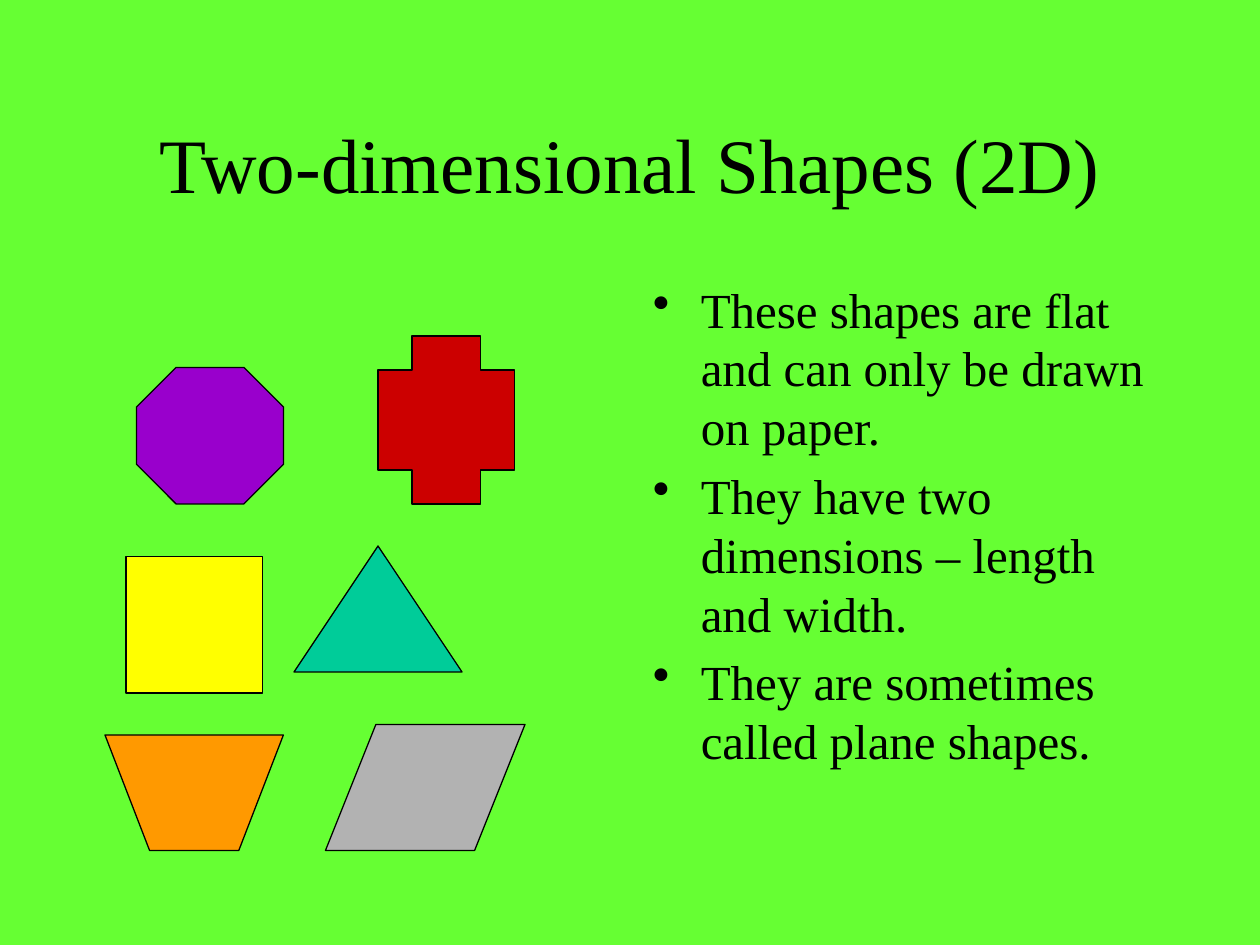
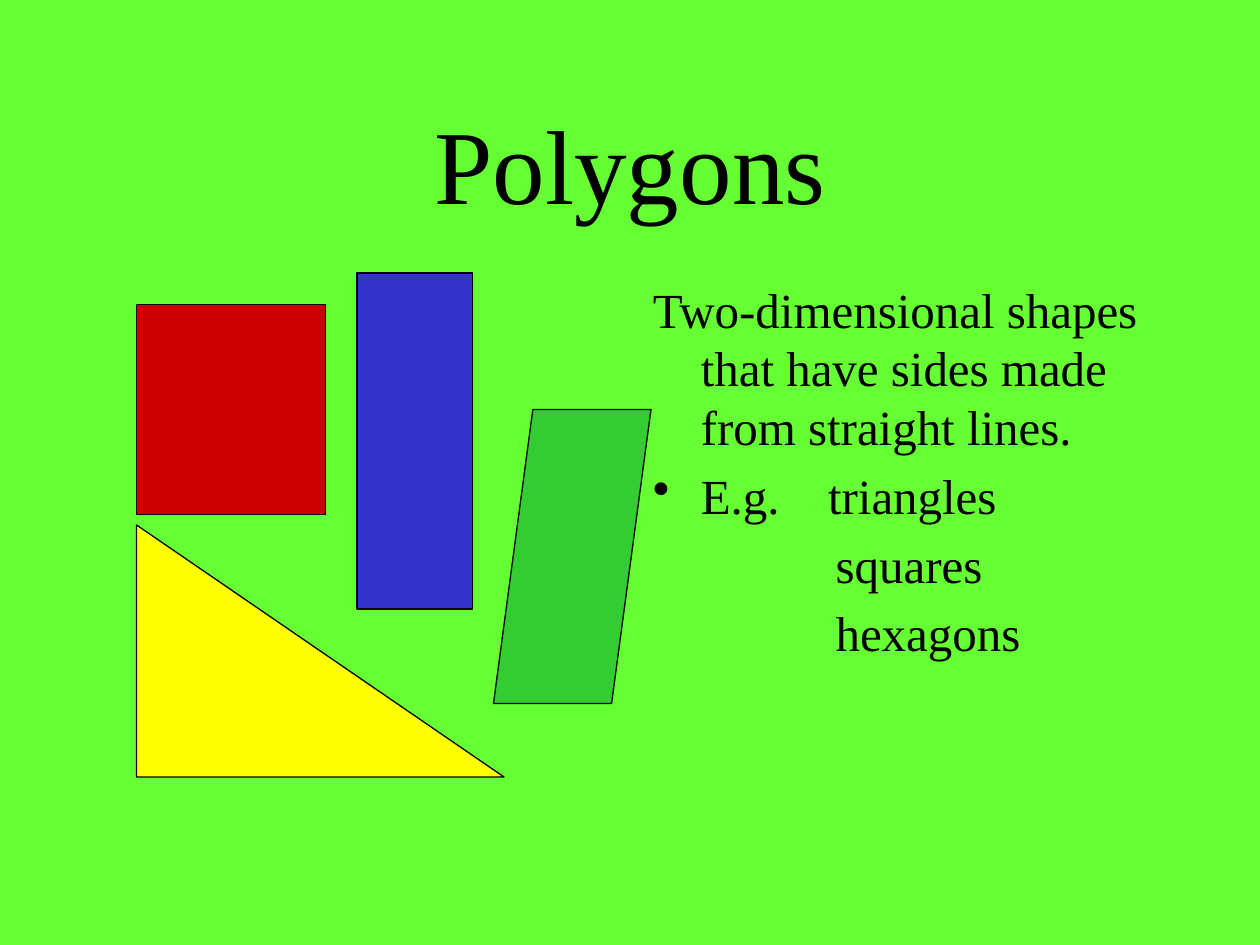
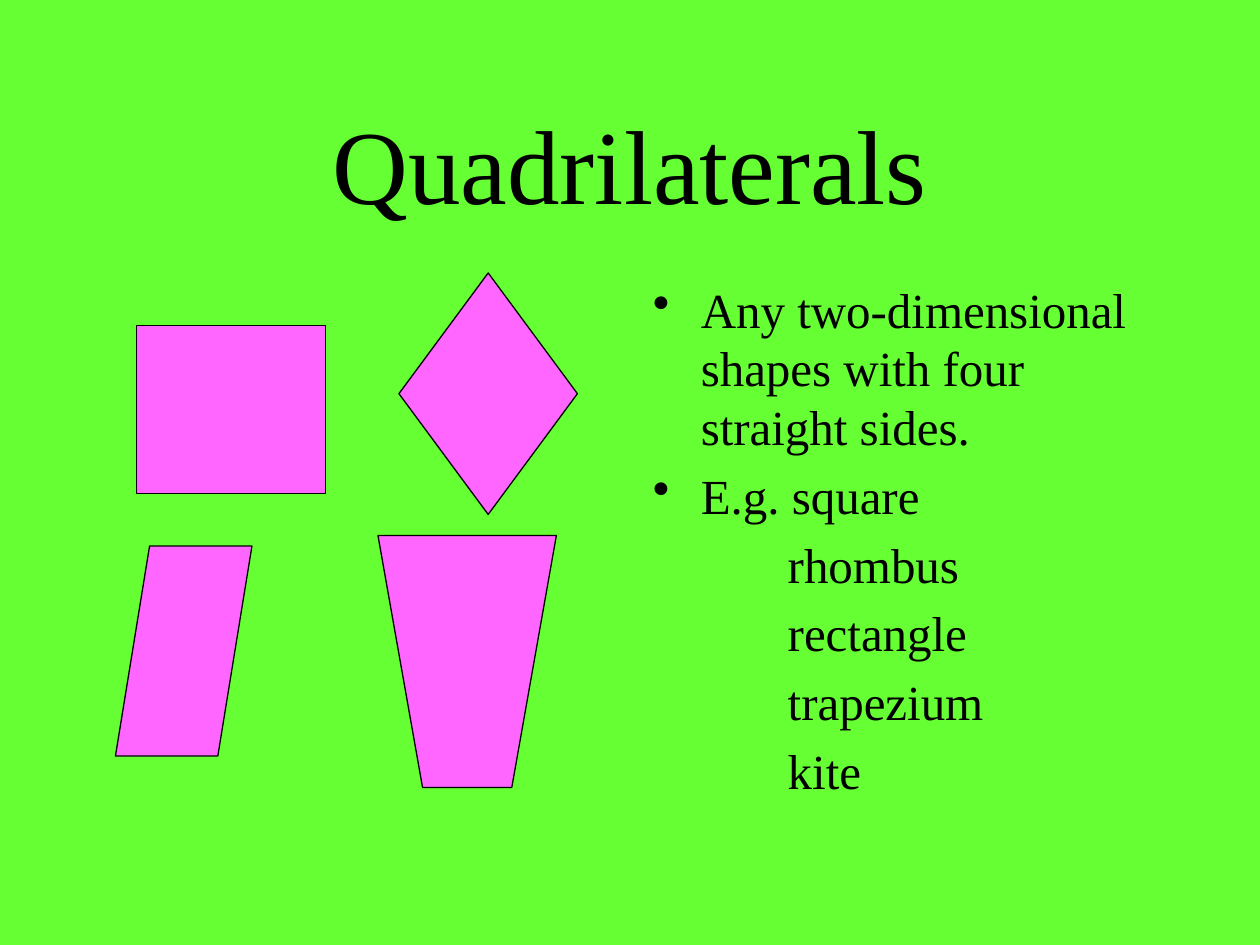
from dataclasses import dataclass

from lxml import etree
from pptx import Presentation
from pptx.dml.color import RGBColor
from pptx.enum.shapes import MSO_SHAPE
from pptx.enum.text import MSO_ANCHOR, PP_ALIGN
from pptx.oxml.ns import qn
from pptx.util import Inches, Pt

OCTAGON = MSO_SHAPE.OCTAGON
RECTANGLE = MSO_SHAPE.RECTANGLE
TRIANGLE = MSO_SHAPE.ISOSCELES_TRIANGLE
RIGHT_TRIANGLE = MSO_SHAPE.RIGHT_TRIANGLE
CROSS = MSO_SHAPE.CROSS
PARALLELOGRAM = MSO_SHAPE.PARALLELOGRAM
DIAMOND = MSO_SHAPE.DIAMOND
MIDDLE = MSO_ANCHOR.MIDDLE
TOP = MSO_ANCHOR.TOP
CENTER = PP_ALIGN.CENTER

COLUMNS, ROWS = 120, 90
TITLE_AREA = (9, 8, 102, 15)
BODY_AREA = (61, 26, 50, 54)


@dataclass(frozen=True)
class Theme:
    font: str = "Times New Roman"
    background: str = "66FF33"
    ink: str = "000000"
    purple: str = "9900CC"
    yellow: str = "FFFF00"
    teal: str = "00CC99"
    red: str = "CC0000"
    orange: str = "FF9900"
    grey: str = "B2B2B2"
    blue: str = "3333CC"
    green: str = "33CC33"
    pink: str = "FF66FF"
    title_size: int = 44
    large_title_size: int = 60
    body_size: int = 28
    paragraph_gap: float = 5.6
    outline: float = 0.75
    hanging: float = 0.38


class ShapesDeck:
    def __init__(self, theme):
        self.theme = theme
        self.deck = Presentation()
        self.deck.slide_width = Inches(10)
        self.deck.slide_height = Inches(7.5)
        self.slide = None

    def area(self, left, top, width, height):
        column = self.deck.slide_width / COLUMNS
        row = self.deck.slide_height / ROWS
        return (round(left * column), round(top * row),
                round(width * column), round(height * row))

    def new_slide(self, title, size):
        self.slide = self.deck.slides.add_slide(self.deck.slide_layouts[6])
        fill = self.slide.background.fill
        fill.solid()
        fill.fore_color.rgb = RGBColor.from_string(self.theme.background)
        heading = self.text_frame(TITLE_AREA, MIDDLE).paragraphs[0]
        heading.alignment = CENTER
        self.add_words(heading, title, size)

    def text_frame(self, cells, anchor):
        frame = self.slide.shapes.add_textbox(*self.area(*cells)).text_frame
        frame.word_wrap = True
        frame.vertical_anchor = anchor
        return frame

    def add_words(self, paragraph, text, size):
        run = paragraph.add_run()
        run.text = text
        run.font.name = self.theme.font
        run.font.size = Pt(size)
        run.font.color.rgb = RGBColor.from_string(self.theme.ink)

    def body(self, entries):
        frame = self.text_frame(BODY_AREA, TOP)
        for index, (text, style) in enumerate(entries):
            paragraph = frame.paragraphs[0] if index == 0 else frame.add_paragraph()
            paragraph.space_before = Pt(self.theme.paragraph_gap)
            self.indent(paragraph, **style)
            self.add_words(paragraph, text, self.theme.body_size)

    def indent(self, paragraph, bullet=False, left=None, tab=None):
        properties = paragraph._p.get_or_add_pPr()
        hanging = self.theme.hanging
        properties.set("marL", str(Inches(hanging if left is None else left)))
        properties.set("indent", str(Inches(-hanging if left is None else 0)))
        if bullet:
            etree.SubElement(properties, qn("a:buChar"), char="•")
        else:
            etree.SubElement(properties, qn("a:buNone"))
        if tab:
            stops = etree.SubElement(properties, qn("a:tabLst"))
            etree.SubElement(stops, qn("a:tab"), pos=str(Inches(tab)), algn="l")

    def finish(self, figure, color):
        figure.shadow.inherit = False
        figure.fill.solid()
        figure.fill.fore_color.rgb = RGBColor.from_string(color)
        figure.line.color.rgb = RGBColor.from_string(self.theme.ink)
        figure.line.width = Pt(self.theme.outline)

    def figure(self, kind, cells, color, adjustment=None):
        figure = self.slide.shapes.add_shape(kind, *self.area(*cells))
        if adjustment is not None:
            figure.adjustments[0] = adjustment
        self.finish(figure, color)

    def trapezium(self, cells, color):
        left, top, width, height = self.area(*cells)
        inset = width // 4
        right, bottom = left + width, top + height
        outline = self.slide.shapes.build_freeform(left, top)
        outline.add_line_segments(
            [(left + inset, bottom), (right - inset, bottom), (right, top)])
        self.finish(outline.convert_to_shape(), color)


BULLET = {"bullet": True}
PLAIN = {}


def listed(names, left):
    return [(name, {"left": left}) for name in names]


def two_dimensional(deck):
    theme = deck.theme
    deck.new_slide("Two-dimensional Shapes (2D)", theme.title_size)
    deck.body([
        ("These shapes are flat and can only be drawn on paper.", BULLET),
        ("They have two dimensions – length and width.", BULLET),
        ("They are sometimes called plane shapes.", BULLET),
    ])
    deck.figure(OCTAGON, (13, 35, 14, 13), theme.purple, 0.29)
    deck.figure(RECTANGLE, (12, 53, 13, 13), theme.yellow)
    deck.figure(TRIANGLE, (28, 52, 16, 12), theme.teal)
    deck.figure(CROSS, (36, 32, 13, 16), theme.red, 0.25)
    deck.trapezium((10, 70, 17, 11), theme.orange)
    deck.figure(PARALLELOGRAM, (31, 69, 19, 12), theme.grey, 0.4)


def polygons(deck):
    theme = deck.theme
    deck.new_slide("Polygons", theme.large_title_size)
    deck.body([
        ("Two-dimensional shapes that have sides made from straight lines.", PLAIN),
        ("E.g.\ttriangles", {"bullet": True, "tab": 1.39}),
        *listed(["squares", "hexagons"], 1.45),
    ])
    deck.figure(RECTANGLE, (13, 29, 18, 20), theme.red)
    deck.figure(RECTANGLE, (34, 26, 11, 32), theme.blue)
    deck.figure(RIGHT_TRIANGLE, (13, 50, 35, 24), theme.yellow)
    deck.figure(PARALLELOGRAM, (47, 39, 15, 28), theme.green, 0.25)


def quadrilaterals(deck):
    theme = deck.theme
    deck.new_slide("Quadrilaterals", theme.large_title_size)
    deck.body([
        ("Any two-dimensional shapes with four straight sides.", BULLET),
        ("E.g. square", BULLET),
        *listed(["rhombus", "rectangle", "trapezium", "kite"], 1.07),
    ])
    deck.figure(RECTANGLE, (13, 31, 18, 16), theme.pink)
    deck.figure(PARALLELOGRAM, (11, 52, 13, 20), theme.pink, 0.25)
    deck.trapezium((36, 51, 17, 24), theme.pink)
    deck.figure(DIAMOND, (38, 26, 17, 23), theme.pink)


def main():
    deck = ShapesDeck(Theme())
    for build in (two_dimensional, polygons, quadrilaterals):
        build(deck)
    deck.deck.save("out.pptx")


if __name__ == "__main__":
    main()
